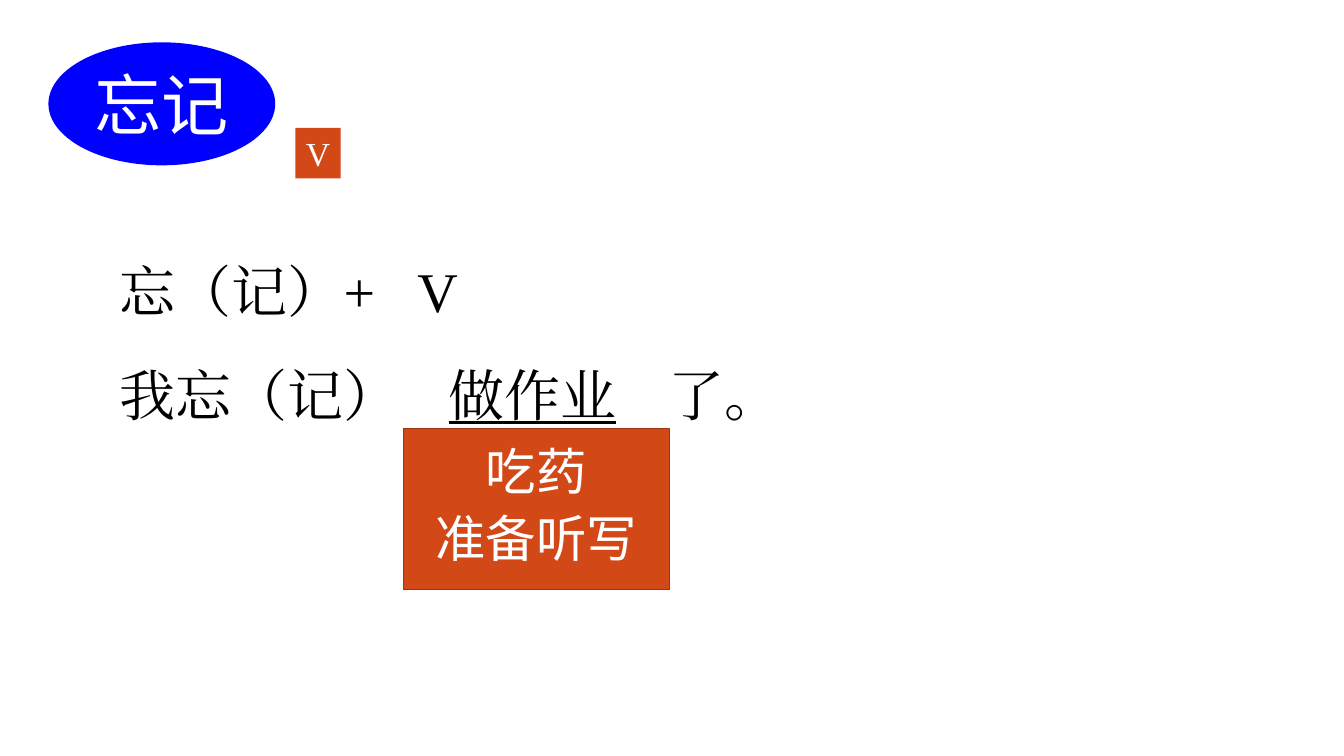
from pptx import Presentation
from pptx import util as u
from pptx.dml.color import RGBColor
from pptx.enum import shapes, text
from pptx.oxml.ns import qn
from lxml import etree

WIDTH, HEIGHT = 13.33, 7.5
SANS, SERIF = "Noto Sans CJK SC", "Times New Roman"
COLORS = {"blue": "0000FF", "orange": "D34817", "rust": "9C3511",
          "white": "FFFFFF", "black": "000000"}


def color(name):
    return RGBColor.from_string(COLORS[name])


def format_run(r, size, font, ink):
    r.font.size = u.Pt(size)
    r.font.name = font
    r.font.color.rgb = color(ink)
    etree.SubElement(r._r.get_or_add_rPr(), qn("a:ea"), typeface=font)


def add_tabs(p, stops):
    """Set left tab stops, in inches from the text edge."""
    tabs = etree.SubElement(p._p.get_or_add_pPr(), qn("a:tabLst"))
    for stop in stops:
        etree.SubElement(tabs, qn("a:tab"), pos=str(u.Inches(stop)), algn="l")


def add_label(slide, kind, box, lines, size, fill, font=SANS, line=None):
    """Add a filled shape with centred white lines of text."""
    sp = slide.shapes.add_shape(kind, *map(u.Inches, box))
    sp.shadow.inherit = False
    sp.fill.solid()
    sp.fill.fore_color.rgb = color(fill)
    if line:
        sp.line.color.rgb = color(line)
        sp.line.width = u.Pt(1)
    else:
        sp.line.fill.background()
    tf = sp.text_frame
    tf.text = "\n".join(lines)
    tf.vertical_anchor = text.MSO_ANCHOR.MIDDLE
    for i, p in enumerate(tf.paragraphs):
        p.alignment = text.PP_ALIGN.CENTER
        if i:
            p.space_before = u.Pt(12)
        if len(lines) > 1:
            p.line_spacing = 0.82
        for r in p.runs:
            format_run(r, size, font, "white")
    return sp


def add_pattern(slide, box, lines):
    """Add sentences; each is (tab stops, [(words, underlined), ...])."""
    tf = slide.shapes.add_textbox(*map(u.Inches, box)).text_frame
    tf.word_wrap = True
    for i, (stops, parts) in enumerate(lines):
        p = tf.add_paragraph() if i else tf.paragraphs[0]
        p.line_spacing = 1.55
        add_tabs(p, stops)
        for words, underlined in parts:
            r = p.add_run()
            r.text = words
            format_run(r, 40, SERIF, "black")
            if underlined:
                r.font.underline = True


def main():
    prs = Presentation()
    prs.slide_width, prs.slide_height = u.Inches(WIDTH), u.Inches(HEIGHT)
    slide = prs.slides.add_slide(prs.slide_layouts[6])
    oval, rect = shapes.MSO_SHAPE.OVAL, shapes.MSO_SHAPE.RECTANGLE

    add_label(slide, oval, (0.48, 0.42, 2.25, 1.22), ["忘记"], 48, "blue")
    add_pattern(slide, (1.09, 2.13, 9.18, 2.12), [
        ([2.95], [("忘（记）+\tV", False)]),
        ([3.26, 5.44], [("我忘（记）", False), ("\t做作业\t", True),
                        ("了。", False)]),
    ])
    add_label(slide, rect, (4, 4.25, 2.64, 1.6), ["吃药", "准备听写"], 36,
              "orange", line="rust")
    verb = add_label(slide, rect, (2.93, 1.27, 0.45, 0.5), ["V"], 24,
                     "orange", font=SERIF)
    verb.text_frame.word_wrap = False

    prs.save("out.pptx")


if __name__ == "__main__":
    main()
